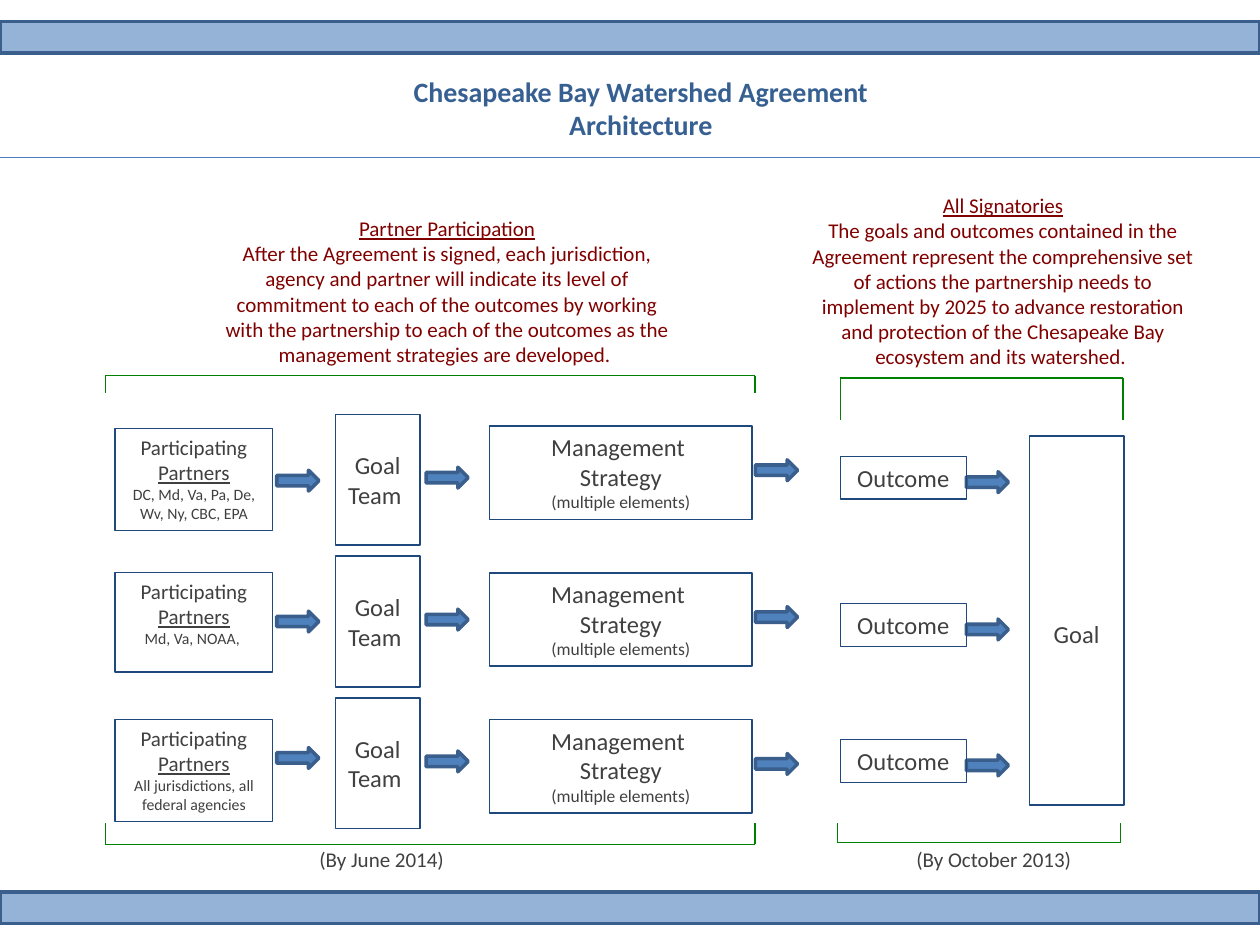
from lxml import etree
from pptx import Presentation
from pptx.dml.color import RGBColor
from pptx.enum.shapes import MSO_CONNECTOR, MSO_SHAPE
from pptx.enum.text import MSO_ANCHOR, PP_ALIGN
from pptx.oxml.ns import qn
from pptx.util import Cm, Pt

RECT, ARROW = MSO_SHAPE.RECTANGLE, MSO_SHAPE.RIGHT_ARROW
STRAIGHT = MSO_CONNECTOR.STRAIGHT
TOP, MIDDLE = MSO_ANCHOR.TOP, MSO_ANCHOR.MIDDLE
CENTER = PP_ALIGN.CENTER

BAND_BLUE = RGBColor(0x95, 0xB3, 0xD7)
EDGE_BLUE = RGBColor(0x3A, 0x5F, 0x8C)
ARROW_BLUE = RGBColor(0x4F, 0x81, 0xBD)
BOX_BLUE = RGBColor(0x1F, 0x49, 0x7D)
TITLE_BLUE = RGBColor(0x37, 0x60, 0x92)
RULE_BLUE = RGBColor(0x4B, 0x7E, 0xBC)
GREEN = RGBColor(0x00, 0x80, 0x00)
MAROON = RGBColor(0x80, 0x00, 0x00)
GREY = RGBColor(0x40, 0x40, 0x40)

SLIDE_W, SLIDE_H = 25.4, 19.05  # all plain lengths are centimetres


def add_block(slide, kind, box, fill, line, weight):
    block = slide.shapes.add_shape(kind, *map(Cm, box))
    block.shadow.inherit = False
    if fill is None:
        block.fill.background()
    else:
        block.fill.solid()
        block.fill.fore_color.rgb = fill
    block.line.color.rgb = line
    block.line.width = Pt(weight)
    return block


def add_arrow(slide, left, top):
    add_block(slide, ARROW, (left, top, 0.85, 0.42), ARROW_BLUE, EDGE_BLUE, 2)


def add_line(slide, x1, y1, x2, y2, color):
    line = slide.shapes.add_connector(STRAIGHT, Cm(x1), Cm(y1), Cm(x2), Cm(y2))
    line.line.color.rgb = color
    line.line.width = Pt(0.75)
    etree.SubElement(line._element.spPr, qn("a:effectLst"))


def write(frame, lines, color=GREY, anchor=TOP, wrap=True):
    """Each line is (size, text, ...); a text starting with _ is underlined."""
    frame.word_wrap = wrap
    frame.vertical_anchor = anchor
    for index, (size, *texts) in enumerate(lines):
        paragraph = frame.paragraphs[0] if index == 0 else frame.add_paragraph()
        paragraph.alignment = CENTER
        paragraph.font.name = "Calibri"
        paragraph.font.size = Pt(size)
        paragraph.font.color.rgb = color
        for text in texts:
            run = paragraph.add_run()
            run.text = text.lstrip("_")
            if text.startswith("_"):
                run.font.underline = True


def add_label(slide, box, lines, color=GREY):
    frame = slide.shapes.add_textbox(*map(Cm, box)).text_frame
    write(frame, lines, color)
    return frame


def add_outlined(slide, box, lines, anchor=TOP, wrap=True):
    frame = add_block(slide, RECT, box, None, BOX_BLUE, 0.75).text_frame
    write(frame, lines, GREY, anchor, wrap)
    return frame


def add_bracket(slide, left, spine, width, tip):
    right = left + width
    add_line(slide, left, spine, right, spine, GREEN)
    for x in (left, right):
        add_line(slide, x, spine, x, tip, GREEN)


def add_header(slide, left, top, width):
    title = add_label(slide, (left + 6.99, top, 11.86, 1.63),
                      [(16, "Chesapeake Bay Watershed Agreement Architecture")], TITLE_BLUE)
    title.paragraphs[0].font.bold = True
    add_line(slide, left, top + 1.8, left + width, top + 1.8, RULE_BLUE)


def add_partners(slide, left, top, height, arrow_top, members):
    add_outlined(slide, (left, top, 3.18, height),
                 [(12, "Participating ", "_Partners"), (9, members)])
    add_arrow(slide, left + 3.26, arrow_top)


def add_goal_team(slide, left, top):
    add_outlined(slide, (left, top, 1.71, 2.64), [(14, "Goal"), (14, "Team ")], MIDDLE, False)
    add_arrow(slide, left + 1.83, top + 1.07)


def add_strategy(slide, left, top):
    add_outlined(slide, (left, top, 5.29, 1.88),
                 [(14, "Management "), (14, "Strategy"), (10, "(multiple elements)")])
    add_arrow(slide, left + 5.36, top + 0.68)


def add_outcome(slide, left, top):
    add_arrow(slide, left + 2.54, top + 0.31)
    add_outlined(slide, (left, top, 2.54, 0.86), [(14, "Outcome")])


def add_participation(slide, left, top):
    """Partners, goal teams and strategies, enclosed by two brackets."""
    add_label(slide, (left + 2.13, top, 9.53, 3.33), [
        (12, "_Partner Participation"),
        (12, "After the Agreement is signed, each jurisdiction, agency and partner will "
             "indicate its level of commitment to each of the outcomes by working with the "
             "partnership to each of the outcomes as the management strategies are developed. "),
    ], MAROON)
    add_bracket(slide, left, top + 3.35, 13.1, top + 3.7)
    partners = [
        (4.42, 2.06, 5.26, "DC, Md, Va, Pa, De, Wv, Ny, CBC, EPA"),
        (7.32, 2.01, 8.1, "Md, Va, NOAA, "),
        (10.28, 2.06, 10.85, "All jurisdictions, all federal agencies"),
    ]
    for row, (offset, height, arrow, members) in enumerate(partners):
        add_partners(slide, left + 0.2, top + offset, height, top + arrow, members)
        add_goal_team(slide, left + 4.64, top + 4.13 + row * 2.86)
        add_strategy(slide, left + 7.75, top + 4.37 + row * 2.96)
    add_bracket(slide, left, top + 12.8, 13.1, top + 12.37)
    add_label(slide, (left + 3.53, top + 12.72, 4.09, 0.76), [(12, "(By June 2014)")])


def add_signatories(slide, left, top):
    """Outcomes leading to the goal, enclosed by two brackets."""
    add_label(slide, (left - 0.85, top, 8.26, 3.84), [
        (12, "_All Signatories"),
        (12, "The goals and outcomes contained in the Agreement represent the comprehensive "
             "set of actions the partnership needs to implement by 2025 to advance restoration "
             "and protection of the Chesapeake Bay ecosystem and its watershed. "),
    ], MAROON)
    add_bracket(slide, left, top + 3.86, 5.7, top + 4.7)
    for offset in (5.44, 8.41, 11.15):
        add_outcome(slide, left, top + offset)
    goal = add_outlined(slide, (left + 3.81, top + 5.03, 1.91, 7.44), [(14, "Goal")], MIDDLE)
    goal.margin_top = Cm(0.64)
    add_bracket(slide, left - 0.05, top + 13.23, 5.7, top + 12.83)
    add_label(slide, (left + 1.05, top + 13.18, 4.09, 0.76), [(12, "(By October 2013)")])


def main():
    presentation = Presentation()
    presentation.slide_width, presentation.slide_height = Cm(SLIDE_W), Cm(SLIDE_H)
    slide = presentation.slides.add_slide(presentation.slide_layouts[6])

    # Bands at the head and foot
    for top in (0.43, 17.98):
        add_block(slide, RECT, (0, top, SLIDE_W, 0.64), BAND_BLUE, EDGE_BLUE, 2)

    add_header(slide, 0, 1.37, SLIDE_W)
    add_participation(slide, 2.12, 4.22)
    add_signatories(slide, 16.94, 3.76)
    presentation.save("out.pptx")


if __name__ == "__main__":
    main()
